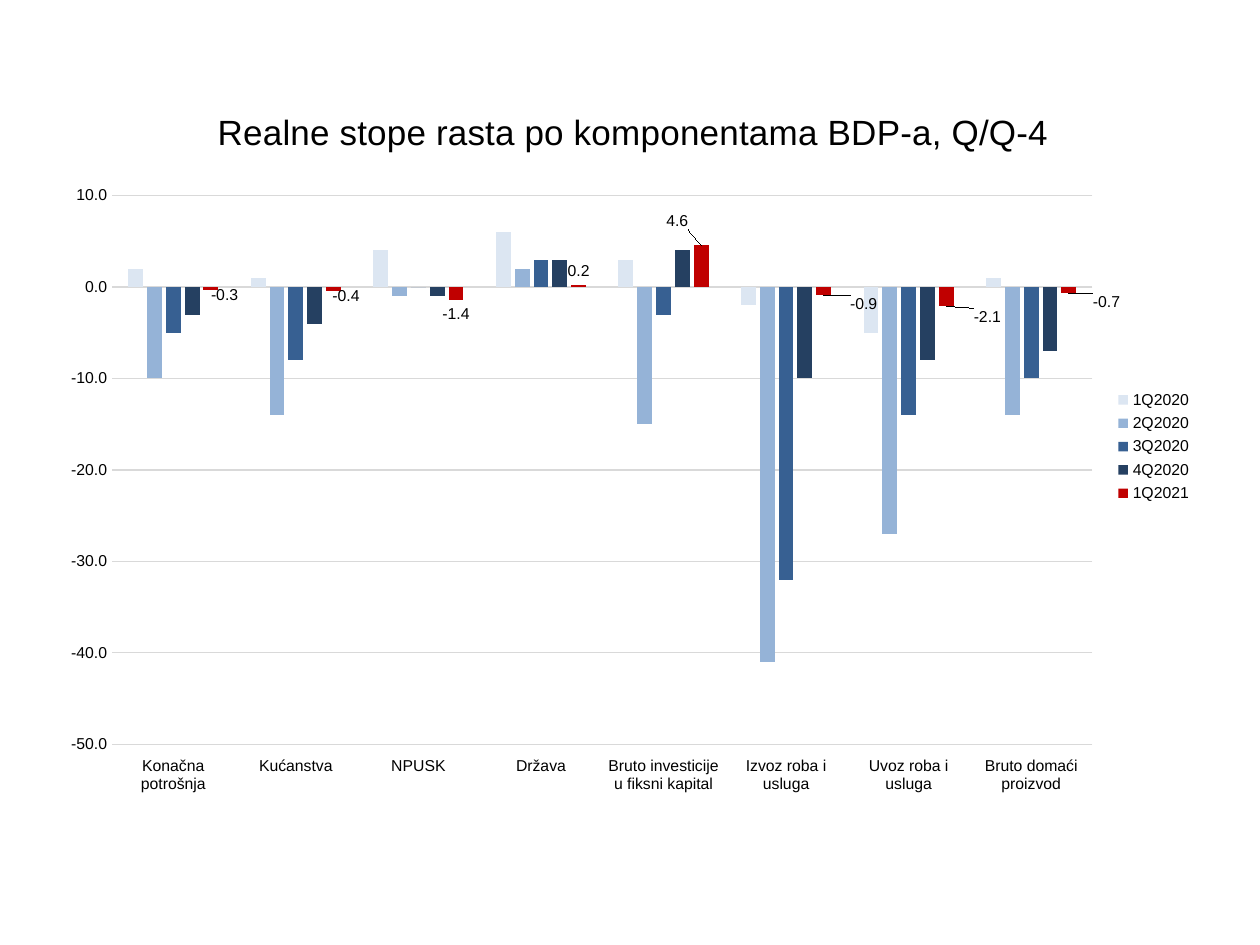
from lxml import etree
from pptx import Presentation
from pptx.chart.data import CategoryChartData
from pptx.dml.color import RGBColor
from pptx.enum.chart import (XL_CHART_TYPE, XL_LABEL_POSITION,
                             XL_LEGEND_POSITION, XL_TICK_LABEL_POSITION,
                             XL_TICK_MARK)
from pptx.oxml.ns import qn
from pptx.util import Inches, Pt

COLUMNS = XL_CHART_TYPE.COLUMN_CLUSTERED
OUT_END = XL_LABEL_POSITION.OUTSIDE_END
RIGHT = XL_LEGEND_POSITION.RIGHT
LOW = XL_TICK_LABEL_POSITION.LOW
NO_TICK = XL_TICK_MARK.NONE

C15 = "http://schemas.microsoft.com/office/drawing/2012/chart"
LABEL_EXT = "{CE6537A1-D6FC-4f65-9D91-7224C49458BB}"
FONT = "Arial"
BLACK, GREY = "000000", "D9D9D9"
FORMAT = "0.0"
TITLE = "Realne stope rasta po komponentama BDP-a, Q/Q-4"
PARTS = ["Konačna potrošnja", "Kućanstva", "NPUSK", "Država",
         "Bruto investicije u fiksni kapital", "Izvoz roba i usluga",
         "Uvoz roba i usluga", "Bruto domaći proizvod"]
# Quarter, colour, growth rates
QUARTERS = [
    ("1Q2020", "DCE6F2", [2, 1, 4, 6, 3, -2, -5, 1]),
    ("2Q2020", "95B3D7", [-10, -14, -1, 2, -15, -41, -27, -14]),
    ("3Q2020", "376092", [-5, -8, 0, 3, -3, -32, -14, -10]),
    ("4Q2020", "254061", [-3, -4, -1, 3, 4, -10, -8, -7]),
    ("1Q2021", "C00000", [-0.3, -0.4, -1.4, 0.2, 4.6, -0.9, -2.1, -0.7]),
]
# Labels moved off their default place, as shares of the chart size
SHIFTS = {0: (0.012, -0.012), 1: (0.011, -0.012), 4: (-0.021, -0.014),
          5: (0.035, -0.007), 6: (0.036, -0.004), 7: (0.033, -0.007)}


def color(code):
    return RGBColor.from_string(code)


def style(font, size):
    font.name = FONT
    font.size = Pt(size)
    font.bold = False
    font.color.rgb = color(BLACK)


def rule(line):
    line.color.rgb = color(GREY)
    line.width = Pt(0.75)


def place(parent, index, **values):
    """Give a chart part a manual layout."""
    for old in parent.findall(qn("c:layout")):
        parent.remove(old)
    layout = etree.Element(qn("c:layout"))
    manual = etree.SubElement(layout, qn("c:manualLayout"))
    for name, value in values.items():
        etree.SubElement(manual, qn("c:" + name)).set("val", str(value))
    parent.insert(index, layout)


def add_axes(chart):
    value, cat = chart.value_axis, chart.category_axis
    for axis in (value, cat):
        axis.major_tick_mark = axis.minor_tick_mark = NO_TICK
        style(axis.tick_labels.font, 9)
    cat.tick_label_position = LOW
    rule(cat.format.line)
    value.minimum_scale, value.maximum_scale = -50, 10
    value.major_unit = 10
    value.tick_labels.number_format = FORMAT
    value.tick_labels.number_format_is_linked = False
    value.format.line.fill.background()
    rule(value.major_gridlines.format.line)


def hide_leaders(group):
    """Turn off the lines from moved labels to their columns."""
    extras = etree.SubElement(group, qn("c:extLst"))
    extra = etree.SubElement(extras, qn("c:ext"), nsmap={"c15": C15},
                             uri=LABEL_EXT)
    etree.SubElement(extra, "{%s}showLeaderLines" % C15, val="0")


def add_labels(series):
    labels = series.data_labels
    labels.show_value = True
    labels.position = OUT_END
    labels.number_format = FORMAT
    labels.number_format_is_linked = False
    style(labels.font, 9)
    for point in SHIFTS:
        label = series.points[point].data_label
        style(label.font, 9)
        label.position = OUT_END
    for item in series._element.iter(qn("c:dLbl")):
        x, y = SHIFTS[int(item.find(qn("c:idx")).get("val"))]
        place(item, 1, x=x, y=y)
        form = etree.Element(qn("c:numFmt"), formatCode=FORMAT,
                             sourceLinked="0")
        item.insert(2, form)
    hide_leaders(series._element.find(qn("c:dLbls")))


def add_growth(slide, left, top, width, height):
    data = CategoryChartData(number_format=FORMAT)
    data.categories = PARTS
    for name, _, rates in QUARTERS:
        data.add_series(name, rates)
    chart = slide.shapes.add_chart(COLUMNS, left, top, width, height,
                                   data).chart
    style(chart.font, 10)

    # Title
    chart.has_title = True
    frame = chart.chart_title.text_frame
    frame.text = TITLE
    style(frame.paragraphs[0].runs[0].font, 20)
    place(chart.chart_title._element, 1, xMode="edge", yMode="edge",
          x=0.13, y=0.03)

    # Columns
    plot = chart.plots[0]
    plot.gap_width, plot.overlap = 219, -27
    plot.vary_by_categories = False
    for series, (_, code, _) in zip(plot.series, QUARTERS):
        series.format.fill.solid()
        series.format.fill.fore_color.rgb = color(code)
        series.invert_if_negative = False
    add_labels(plot.series[-1])

    # Axes and plot area
    add_axes(chart)
    place(plot._element.getparent(), 0, layoutTarget="inner", xMode="edge",
          yMode="edge", x=0.043, y=0.156, w=0.859, h=0.752)

    # Legend
    chart.has_legend = True
    chart.legend.position = RIGHT
    chart.legend.include_in_layout = False
    style(chart.legend.font, 9)


def main():
    deck = Presentation()
    deck.slide_width, deck.slide_height = Inches(10), Inches(7.5)
    slide = deck.slides.add_slide(deck.slide_layouts[6])
    add_growth(slide, Inches(0.5), Inches(0.65), Inches(9.06), Inches(5.79))
    deck.save("out.pptx")


if __name__ == "__main__":
    main()
